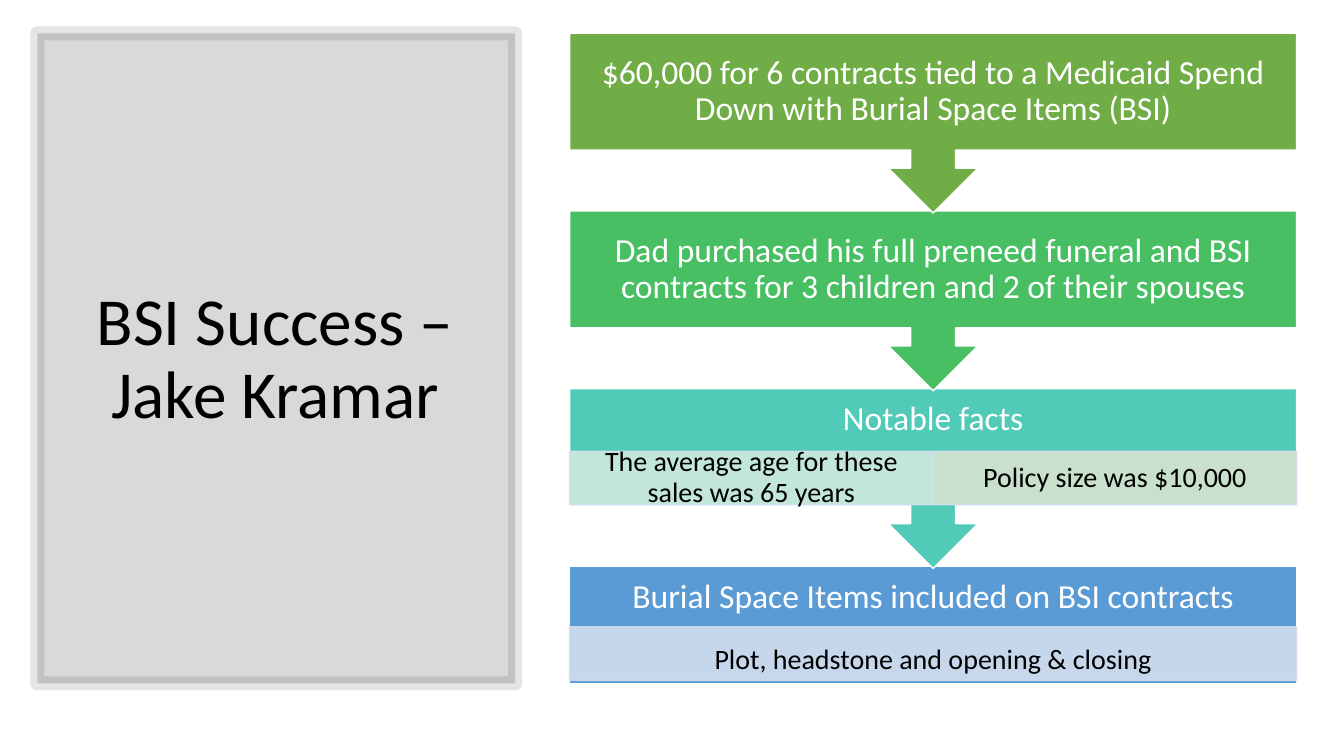
from lxml import etree
from pptx import Presentation
from pptx.dml.color import RGBColor
from pptx.enum.shapes import MSO_SHAPE
from pptx.enum.text import MSO_ANCHOR, MSO_AUTO_SIZE, PP_ALIGN
from pptx.oxml.ns import qn
from pptx.util import Inches, Pt

RECT = MSO_SHAPE.RECTANGLE
CALLOUT = MSO_SHAPE.UP_ARROW_CALLOUT
MIDDLE = MSO_ANCHOR.MIDDLE
CENTER = PP_ALIGN.CENTER
NO_FIT = MSO_AUTO_SIZE.NONE

COLORS = {
    "black": "000000", "white": "FFFFFF",
    "green": "70AD47", "emerald": "49BF64", "teal": "52CAB8", "blue": "5B9BD5",
    "pale_teal": "D0EAE1", "pale_green": "D5E3CF", "pale_blue": "D2DEEF",
}

TITLE = "BSI Success – Jake Kramar"
# Each step: colour, heading, height of the heading above its details,
# and details as (text, colour, top inset)
STEPS = [
    ("green", "$60,000 for 6 contracts tied to a Medicaid Spend Down "
              "with Burial Space Items (BSI)", 0, []),
    ("emerald", "Dad purchased his full preneed funeral and BSI contracts "
                "for 3 children and 2 of their spouses", 0, []),
    ("teal", "Notable facts", 0.62,
     [("The average age for these sales was 65 years", "pale_teal", 0.03),
      ("Policy size was $10,000", "pale_green", 0.03)]),
    ("blue", "Burial Space Items included on BSI contracts", 0.6,
     [("Plot, headstone and opening & closing", "pale_blue", 0.17)]),
]
BODY_HEIGHT = 1.16
HEADING_HEIGHT = 0.62
DETAIL_HEIGHT = 0.53


def paint(color_format, color, opacity):
    """Set a solid colour and, below 100 percent, its opacity."""
    color_format.rgb = RGBColor.from_string(COLORS[color])
    return opacity * 1000 if opacity < 100 else None


def add_block(slide, kind, box, fill, line, line_width=1, fill_opacity=100,
              line_opacity=100):
    block = slide.shapes.add_shape(kind, *map(Inches, box))
    block.shadow.inherit = False
    block.line.width = Pt(line_width)
    for part, color, opacity in ((block.fill, fill, fill_opacity),
                                 (block.line.fill, line, line_opacity)):
        part.solid()
        alpha = paint(part.fore_color, color, opacity)
        if alpha is not None:
            properties = block._element.spPr
            parent = properties if part is block.fill else properties.find(qn("a:ln"))
            rgb = parent.find(qn("a:solidFill")).find(qn("a:srgbClr"))
            etree.SubElement(rgb, qn("a:alpha")).set("val", str(alpha))
    return block


def write(holder, text, size, color="black", insets=(0.1, 0.05, 0.1, 0.05)):
    frame = holder.text_frame
    frame.word_wrap = True
    frame.auto_size = NO_FIT
    frame.vertical_anchor = MIDDLE
    (frame.margin_left, frame.margin_top,
     frame.margin_right, frame.margin_bottom) = map(Inches, insets)
    paragraph = frame.paragraphs[0]
    paragraph.alignment = CENTER
    paragraph.line_spacing = 0.9
    run = paragraph.add_run()
    run.text = text
    run.font.name = "Calibri"
    run.font.size = Pt(size)
    run.font.color.rgb = RGBColor.from_string(COLORS[color])


def add_title_panel(slide, left, top, width, height):
    panel = add_block(slide, RECT, (left, top, width, height), "black", "black",
                      line_width=10, fill_opacity=15, line_opacity=10)
    title = slide.shapes.title
    title._element.addprevious(panel._element)  # panel goes behind the title
    title.left, title.top = Inches(left + 0.28), Inches(top + 0.37)
    title.width, title.height = Inches(width - 0.58), Inches(height - 0.7)
    write(title, TITLE, 48)


def add_step(slide, step, left, top, width, height, has_arrow):
    color, heading, detail_offset, details = step
    # Body, with an arrow to the next step
    body = add_block(slide, CALLOUT if has_arrow else RECT,
                     (left, top, width, height), color, "white")
    if has_arrow:
        body.rotation = 180
    # Heading
    heading_height = HEADING_HEIGHT if details else BODY_HEIGHT
    label = slide.shapes.add_textbox(
        *map(Inches, (left, top, width, heading_height)))
    write(label, heading, 24, "white", insets=(0.19,) * 4)
    # Details side by side
    for i, (text, fill, inset_top) in enumerate(details):
        cell_width = width / len(details)
        cell = add_block(
            slide, RECT,
            (left + i * cell_width, top + detail_offset, cell_width, DETAIL_HEIGHT),
            fill, "pale_blue", fill_opacity=90, line_opacity=90)
        write(cell, text, 20, insets=(0.16, inset_top, 0.16, 0.03))


def add_flow(slide, left, top, width, height):
    last = len(STEPS) - 1
    pitch = (height - BODY_HEIGHT) / last
    # Bottom step first, so each arrow tip lies over the step below
    for i in range(last, -1, -1):
        has_arrow = i < last
        step_height = pitch + 0.02 if has_arrow else BODY_HEIGHT
        add_step(slide, STEPS[i], left, top + i * pitch, width, step_height, has_arrow)


def main():
    deck = Presentation()
    deck.slide_width, deck.slide_height = Inches(13.33), Inches(7.5)
    slide = deck.slides.add_slide(deck.slide_layouts[5])
    add_title_panel(slide, 0.37, 0.33, 4.74, 6.45)
    add_flow(slide, 5.65, 0.33, 7.21, 6.45)
    deck.save("out.pptx")


if __name__ == "__main__":
    main()
